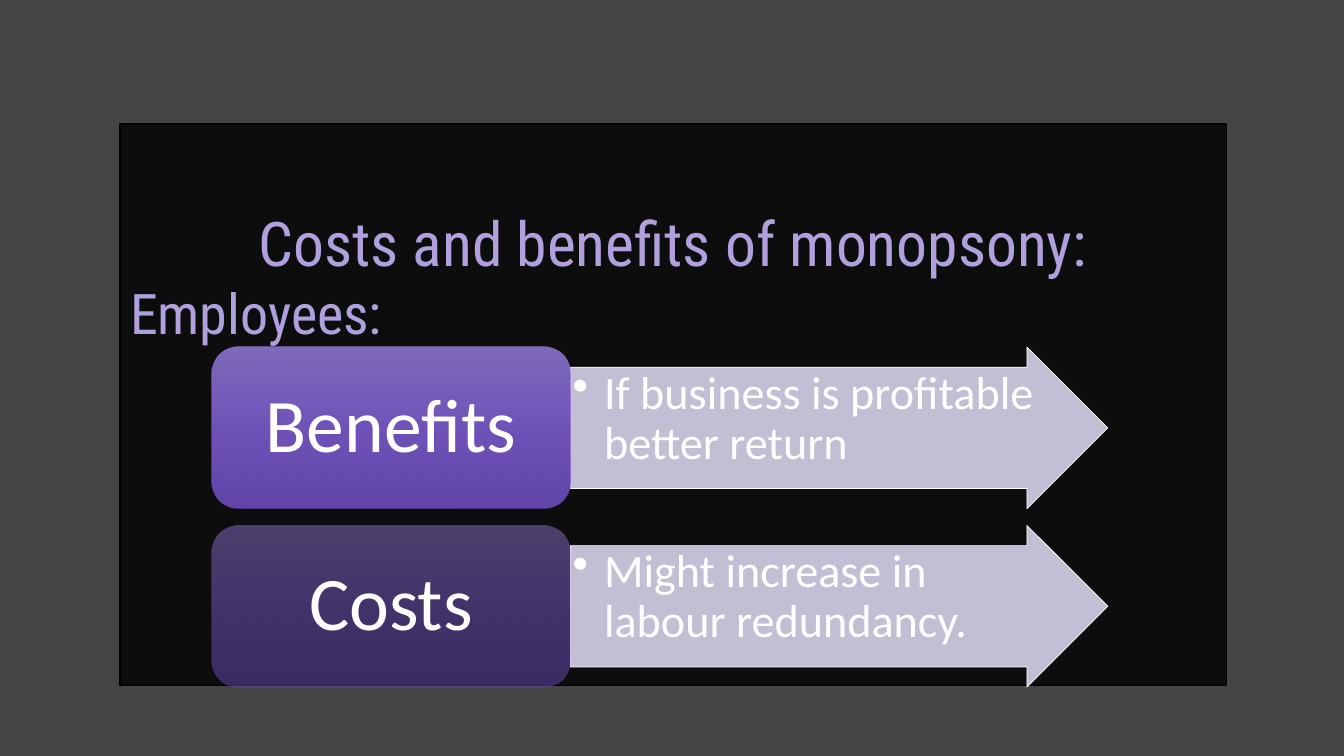
from lxml.etree import SubElement
from pptx import Presentation
from pptx.dml.color import RGBColor
from pptx.enum.shapes import MSO_SHAPE
from pptx.enum.text import MSO_ANCHOR, MSO_AUTO_SIZE, PP_ALIGN
from pptx.oxml.ns import qn
from pptx.util import Pt

COLORS = {
    "background": "454545", "panel": "0D0D0D", "outline": "000000",
    "heading": "B0A0DD", "arrow": "D7D2EA", "white": "FFFFFF",
    "box_top": "8B75CD", "box_middle": "7A5BCB", "box_bottom": "6A4BBA",
}
ROWS = [
    ("Benefits", "If business is profitable better return", 90),
    ("Costs", "Might increase in labour redundancy.", 50),
]
ROW_TOP, ROW_STEP, ROW_HEIGHT = 247.9, 127.4, 115.5
BOX_LEFT, BOX_WIDTH = 151, 256.5
ARROW_LEFT, ARROW_WIDTH = 407.5, 383.8


def rgb(name):
    """Return the named colour."""
    return RGBColor.from_string(COLORS[name])


def set_alpha(color, percent):
    """Give a colour element an opacity in percent."""
    SubElement(color, qn("a:alpha"), val=str(percent * 1000))


def paint(s, fill, line, width):
    """Set a solid fill and an outline."""
    s.fill.solid()
    s.fill.fore_color.rgb = rgb(fill)
    s.line.color.rgb = rgb(line)
    s.line.width = Pt(width)


def set_frame(tf, anchor, left, top, right, bottom):
    """Set the anchor and insets of a text frame."""
    tf.word_wrap = True
    tf.auto_size = MSO_AUTO_SIZE.NONE
    tf.vertical_anchor = anchor
    tf.margin_left, tf.margin_top = Pt(left), Pt(top)
    tf.margin_right, tf.margin_bottom = Pt(right), Pt(bottom)


def write(p, text, size, font="Calibri", color="white", align=PP_ALIGN.LEFT, spacing=0.9):
    """Write formatted text into a paragraph."""
    p.alignment = align
    p.line_spacing = spacing
    p.space_before = Pt(0)
    r = p.add_run()
    r.text = text
    r.font.size = Pt(size)
    r.font.name = font
    r.font.color.rgb = rgb(color)


def add_bullet(p, indent):
    """Give a paragraph a bullet with a hanging indent."""
    pPr = p._p.get_or_add_pPr()
    pPr.set("marL", str(Pt(indent)))
    pPr.set("indent", str(-Pt(indent)))
    SubElement(pPr, qn("a:buChar"), char="•")


def add_heading(slide):
    """Turn the title into the dark panel with its two heading lines."""
    s = slide.shapes.title
    s.left, s.top, s.width, s.height = Pt(85.7), Pt(88.6), Pt(790.6), Pt(401)
    paint(s, "panel", "outline", 1)
    tf = s.text_frame
    set_frame(tf, MSO_ANCHOR.TOP, 7.2, 57.4, 7.2, 3.6)
    style = {"font": "Roboto Condensed", "color": "heading", "spacing": 1.0}
    write(tf.paragraphs[0], "Costs and benefits of monopsony:", 44, align=PP_ALIGN.CENTER, **style)
    write(tf.add_paragraph(), "Employees:", 40, **style)


def add_arrow(slide, top, text):
    """Add a pale arrow holding one bullet."""
    s = slide.shapes.add_shape(
        MSO_SHAPE.RIGHT_ARROW, Pt(ARROW_LEFT), Pt(top), Pt(ARROW_WIDTH), Pt(ROW_HEIGHT))
    s.shadow.inherit = False
    s.adjustments[0], s.adjustments[1] = 0.75, 0.5
    paint(s, "arrow", "white", 0.5)
    set_alpha(s._element.spPr.find(qn("a:solidFill"))[0], 90)
    tf = s.text_frame
    set_frame(tf, MSO_ANCHOR.TOP, 1.5, 1.5, 1.5, 1.5)
    p = tf.paragraphs[0]
    write(p, text, 33)
    add_bullet(p, 22.5)


def add_box(slide, top, text, opacity):
    """Add a rounded label box with a vertical gradient."""
    s = slide.shapes.add_shape(
        MSO_SHAPE.ROUNDED_RECTANGLE, Pt(BOX_LEFT), Pt(top), Pt(BOX_WIDTH), Pt(ROW_HEIGHT))
    s.shadow.inherit = False
    s.line.fill.background()
    s.fill.gradient()
    s.fill.gradient_angle = 270
    stops = s._element.spPr.find(qn("a:gradFill")).find(qn("a:gsLst"))
    for stop in list(stops):
        stops.remove(stop)
    for i, name in enumerate(("box_top", "box_middle", "box_bottom")):
        stop = SubElement(stops, qn("a:gs"), pos=str(i * 50000))
        set_alpha(SubElement(stop, qn("a:srgbClr"), val=COLORS[name]), opacity)
    tf = s.text_frame
    set_frame(tf, MSO_ANCHOR.MIDDLE, 16.2, 8.1, 16.2, 8.1)
    write(tf.paragraphs[0], text, 54, align=PP_ALIGN.CENTER)


def main():
    """Build and save the slide."""
    prs = Presentation()
    prs.slide_width, prs.slide_height = Pt(960), Pt(540)
    slide = prs.slides.add_slide(prs.slide_layouts[5])
    slide.background.fill.solid()
    slide.background.fill.fore_color.rgb = rgb("background")
    add_heading(slide)
    for i, (label, point, opacity) in enumerate(ROWS):
        top = ROW_TOP + i * ROW_STEP
        add_arrow(slide, top, point)
        add_box(slide, top, label, opacity)
    prs.save("out.pptx")


if __name__ == "__main__":
    main()
